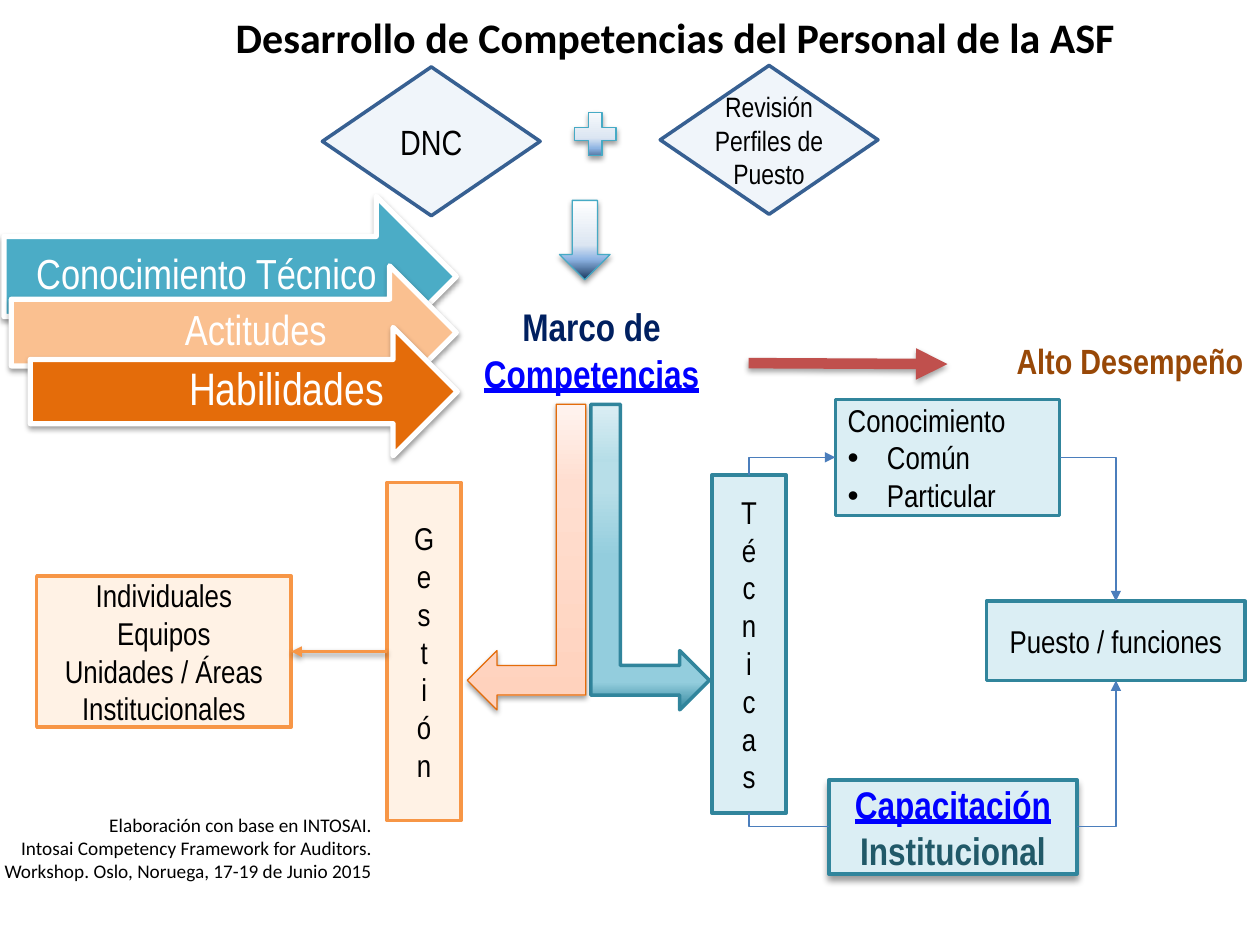
import lxml.etree
import pptx
import pptx.dml.color
import pptx.enum.shapes
import pptx.enum.text
import pptx.oxml.ns
import pptx.util

Cm = pptx.util.Cm
Pt = pptx.util.Pt
SHAPE = pptx.enum.shapes.MSO_SHAPE
CONNECTOR = pptx.enum.shapes.MSO_CONNECTOR
ALIGN = pptx.enum.text.PP_ALIGN
ANCHOR = pptx.enum.text.MSO_ANCHOR
qn = pptx.oxml.ns.qn

COLORS = {
    "black": "000000", "white": "FFFFFF", "navy": "002060", "link": "0000FF",
    "brown": "984807", "red": "C0504D", "aqua": "4BACC6", "peach": "FAC090",
    "orange": "E46C0A", "cream": "FFF2E5", "amber": "F79646",
    "pale_teal": "DBEEF4", "teal": "31859C", "deep_teal": "215968",
    "pale_blue": "F0F5FA", "blue": "376092", "cyan": "46AAC5", "wire": "4B7EBC",
}
BLUE_FADE = [(0, "17375E"), (26, "8EB4E3"), (44, "DCE6F2"), (100, "FFFFFF")]
PEACH_FADE = [(2, "FFF2ED"), (26, "FFDED0"), (97, "FFD2BD")]
TEAL_FADE = [(0, "31859C"), (9, "93CDDD"), (50, "93CDDD"), (72, "B7DEE8"),
             (81, "B5DDE7"), (100, "DBEEF4")]
SOFT = (38, 3.1, 1.6)
TOP, LEFT, BOTTOM, RIGHT = range(4)


def rgb(name):
    return pptx.dml.color.RGBColor.from_string(COLORS[name])


def add_node(parent, tag, **attributes):
    node = lxml.etree.SubElement(parent, qn(tag))
    for name, value in attributes.items():
        node.set(name, str(value))
    return node


def side(shape, site):
    x, y = shape.left + shape.width // 2, shape.top + shape.height // 2
    return {TOP: (x, shape.top), LEFT: (shape.left, y),
            BOTTOM: (x, shape.top + shape.height),
            RIGHT: (shape.left + shape.width, y)}[site]


class SlideBuilder:
    font = "Arial Narrow"

    def __init__(self, page):
        self.page = page

    def shadow(self, effects, alpha, blur, distance):
        outer = add_node(effects, "a:outerShdw", blurRad=Pt(blur), dist=Pt(distance),
                         dir=5400000, rotWithShape=0)
        color = add_node(outer, "a:srgbClr", val=COLORS["black"])
        add_node(color, "a:alpha", val=alpha * 1000)

    def shape(self, kind, place, fill, line, width=2, shadow=None):
        shape = self.page.shapes.add_shape(kind, *map(Cm, place))
        shape.shadow.inherit = False
        if fill:
            shape.fill.solid()
            shape.fill.fore_color.rgb = rgb(fill)
        shape.line.color.rgb = rgb(line)
        shape.line.width = Pt(width)
        if shadow:
            self.shadow(shape.element.spPr.find(qn("a:effectLst")), *shadow)
        return shape

    def gradient(self, shape, stops, angle=90):
        shape.fill.gradient()
        shape.fill.gradient_angle = angle
        stop_list = shape.element.spPr.find(qn("a:gradFill")).find(qn("a:gsLst"))
        for stop in list(stop_list):
            stop_list.remove(stop)
        for position, color in stops:
            stop = add_node(stop_list, "a:gs", pos=position * 1000)
            add_node(stop, "a:srgbClr", val=color)

    def fill_text(self, shape, text, size, color="black", bold=False, font=None,
                  align=ALIGN.CENTER, anchor=ANCHOR.MIDDLE, insets=(0.25, 0.13, 0.25, 0.13)):
        frame = shape.text_frame
        frame.text = text
        frame.word_wrap = True
        frame.vertical_anchor = anchor
        frame.margin_left, frame.margin_top, frame.margin_right, frame.margin_bottom = map(Cm, insets)
        for para in frame.paragraphs:
            para.alignment = align
            for span in para.runs:
                span.font.name = font or self.font
                span.font.size = Pt(size)
                span.font.bold = bold
                span.font.color.rgb = rgb(color)
        return frame

    def label(self, place, text, size, **style):
        box = self.page.shapes.add_textbox(*map(Cm, place))
        return self.fill_text(box, text, size, **style)

    def link_style(self, span):
        span.font.underline = True
        span.font.color.rgb = rgb("link")

    def stack_letters(self, frame):
        frame._txBody.bodyPr.set("vert", "wordArtVert")

    def indent(self, para, left, first=0):
        properties = para._p.get_or_add_pPr()
        properties.set("marL", str(Cm(left)))
        properties.set("indent", str(Cm(first)))
        return properties

    def bullet(self, para):
        properties = self.indent(para, 0.79, -0.79)
        add_node(properties, "a:buFont", typeface="Arial")
        add_node(properties, "a:buChar", char="•")

    def banner(self, place, fill, text, size, indent):
        left, top, width, height = place
        self.shape(SHAPE.RIGHT_ARROW, place, fill, "white", 3, SOFT)
        frame = self.label((left, top + height / 4, width - height / 4, height / 2),
                           text, size, color="white", align=ALIGN.LEFT,
                           insets=(0.25, 0.25, 0.71, 0.28))
        frame.paragraphs[0].line_spacing = 0.9
        self.indent(frame.paragraphs[0], indent)

    def connector(self, kind, start, end, color, width, head=None, shadow=None):
        line = self.page.shapes.add_connector(kind, *start, *end)
        line.line.color.rgb = rgb(color)
        line.line.width = Pt(width)
        properties = line.element.spPr
        if head:
            add_node(properties.find(qn("a:ln")), head, type="triangle")
        effects = add_node(properties, "a:effectLst")
        if shadow:
            self.shadow(effects, *shadow)
        return line

    def elbow(self, start, end, head=None):
        line = self.connector(CONNECTOR.ELBOW, start, end, "wire", 0.75, head)
        line.element.spPr.find(qn("a:prstGeom")).set("prst", "bentConnector2")


def main():
    deck = pptx.Presentation()
    deck.slide_width, deck.slide_height = Cm(25.4), Cm(19.05)
    build = SlideBuilder(deck.slides.add_slide(deck.slide_layouts[6]))
    tight = (0, 0, 0, 0)

    framework = build.label((9.22, 5.64, 5.41, 2.82), "Marco de ", 22, color="navy", bold=True)
    span = framework.paragraphs[0].add_run()
    span.text = "Competencias"
    span.font.name, span.font.size, span.font.bold = build.font, Pt(22), True
    build.link_style(span)
    build.label((3.71, -0.53, 19.81, 2.54), "Desarrollo de Competencias del Personal de la ASF",
                24, bold=True, font="Calibri")

    for banner in [
        ((0.08, 3.96, 9.12, 3.23), "aqua", "Conocimiento Técnico", 24, 0.4),
        ((0.23, 5.36, 8.97, 2.69), "peach", "Actitudes", 24, 3.25),
        ((0.61, 6.6, 8.61, 2.59), "orange", "Habilidades", 26, 2.95),
    ]:
        build.banner(*banner)

    for left, top, text, size in [(6.5, 1.35, "DNC", 20),
                                  (13.31, 1.32, "Revisión Perfiles de Puesto", 16)]:
        diamond = build.shape(SHAPE.DIAMOND, (left, top, 4.39, 3), "pale_blue", "blue")
        build.fill_text(diamond, text, size, insets=tight)

    for kind, place in [(SHAPE.MATH_PLUS, (11.43, 2.11, 1.14, 1.19)),
                        (SHAPE.DOWN_ARROW, (11.28, 4.04, 1.02, 1.6))]:
        build.gradient(build.shape(kind, place, None, "cyan", 0.75, SOFT), BLUE_FADE)

    build.label((20.19, 6.32, 5.18, 1.88), "Alto Desempeño", 20, color="brown", bold=True)

    knowledge = build.shape(SHAPE.RECTANGLE, (16.84, 8.05, 4.52, 2.34), "pale_teal", "teal")
    frame = build.fill_text(knowledge, "Conocimiento\nComún\nParticular", 18, align=ALIGN.JUSTIFY)
    for para in frame.paragraphs[1:]:
        build.bullet(para)

    position = build.shape(SHAPE.RECTANGLE, (19.89, 12.12, 5.21, 1.6), "pale_teal", "teal")
    build.fill_text(position, "Puesto / funciones", 18, insets=tight)

    training = build.shape(SHAPE.RECTANGLE, (16.71, 15.72, 5, 1.9), "pale_teal", "teal",
                           shadow=(40, 4, 3))
    frame = build.fill_text(training, "Capacitación\nInstitucional", 22, "deep_teal", True,
                            insets=tight)
    build.link_style(frame.paragraphs[0].runs[0])

    management = build.shape(SHAPE.RECTANGLE, (7.8, 9.73, 1.5, 6.81), "cream", "amber")
    build.stack_letters(build.fill_text(management, "Gestión", 18))
    levels = build.shape(SHAPE.RECTANGLE, (0.74, 11.61, 5.13, 3.05), "cream", "amber")
    build.fill_text(levels, "Individuales\nEquipos\nUnidades / Áreas\nInstitucionales", 18)
    technical = build.shape(SHAPE.RECTANGLE, (14.35, 9.58, 1.5, 6.81), "pale_teal", "teal")
    build.stack_letters(build.fill_text(technical, "Técnicas", 18, insets=tight))

    build.label((-0.38, 16.26, 8.13, 1.68),
                "Elaboración con base en INTOSAI.\nIntosai Competency Framework for Auditors.\n"
                "Workshop. Oslo, Noruega, 17-19 de Junio 2015",
                11, font="Calibri", align=ALIGN.RIGHT, anchor=ANCHOR.TOP)

    for left, line, width, shadow, stops, angle in [
        (11.91, "teal", 2, None, TEAL_FADE, 270),
        (9.42, "orange", 0.75, SOFT, PEACH_FADE, 90),
    ]:
        arrow = build.shape(SHAPE.BENT_ARROW, (left, 8.15, 2.39, 6.16), None, line, width, shadow)
        build.gradient(arrow, stops, angle)
        arrow.adjustments[3] = 0
        arrow.rotation = 180
        if line == "teal":
            arrow.element.spPr.find(qn("a:xfrm")).set("flipH", "1")

    build.connector(CONNECTOR.STRAIGHT, (Cm(15.09), Cm(7.32)), (Cm(19.1), Cm(7.34)),
                    "red", 6, "a:tailEnd", (35, 3.1, 1.8))
    link = build.connector(CONNECTOR.STRAIGHT, side(management, LEFT), side(levels, RIGHT),
                           "amber", 2, "a:tailEnd", SOFT)
    link.begin_connect(management, LEFT)
    link.end_connect(levels, RIGHT)

    build.elbow(side(knowledge, RIGHT), side(position, TOP), "a:tailEnd")
    build.elbow(side(knowledge, LEFT), side(technical, TOP), "a:headEnd")
    build.elbow(side(training, RIGHT), side(position, BOTTOM), "a:tailEnd")
    build.elbow(side(training, LEFT), side(technical, BOTTOM))

    deck.save("out.pptx")


if __name__ == "__main__":
    main()
